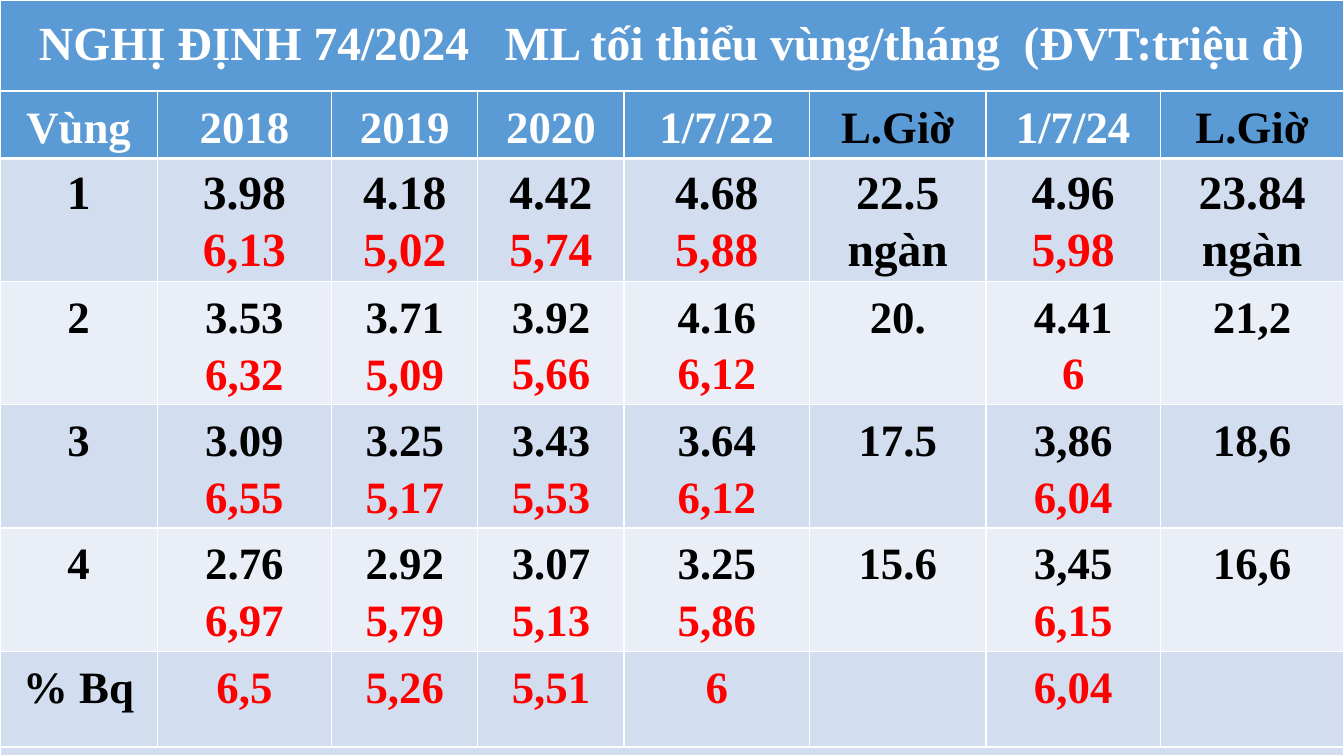
from lxml import etree
from pptx import Presentation
from pptx.dml.color import RGBColor
from pptx.enum.text import MSO_ANCHOR, PP_ALIGN
from pptx.oxml.ns import qn
from pptx.util import Inches, Pt

CENTER = PP_ALIGN.CENTER
MIDDLE = MSO_ANCHOR.MIDDLE
WHITE = RGBColor(0xFF, 0xFF, 0xFF)
BLACK = RGBColor(0x00, 0x00, 0x00)
RED = RGBColor(0xFF, 0x00, 0x00)
BLUE = RGBColor(0x5B, 0x9B, 0xD5)
BAND = RGBColor(0xD2, 0xDE, 0xEF)
PALE = RGBColor(0xEA, 0xEF, 0xF7)

TITLE = "NGHỊ ĐỊNH 74/2024   ML tối thiểu vùng/tháng  (ĐVT:triệu đ)"
UNIT = "ngàn"
HOURLY = "L.Giờ"
WAGES = [
    ["Vùng", "2018", "2019", "2020", "1/7/22", HOURLY, "1/7/24", HOURLY],
    ["1", "3.98\n6,13", "4.18\n5,02", "4.42\n5,74", "4.68\n5,88",
     "22.5\n" + UNIT, "4.96\n5,98", "23.84\n" + UNIT],
    ["2", "3.53\n6,32", "3.71\n5,09", "3.92\n5,66", "4.16\n6,12",
     "20.", "4.41\n6", "21,2"],
    ["3", "3.09\n6,55", "3.25\n5,17", "3.43\n5,53", "3.64\n6,12",
     "17.5", "3,86\n6,04", "18,6"],
    ["4", "2.76\n6,97", "2.92\n5,79", "3.07\n5,13", "3.25\n5,86",
     "15.6", "3,45\n6,15", "16,6"],
    ["% Bq", "6,5", "5,26", "5,51", "6", "", "6,04", ""],
]
COLS = [1.56, 1.73, 1.45, 1.45, 1.84, 1.75, 1.73, 1.82]
ROWS = [0.66] + [1.22] * 4 + [0.95]
LAST = len(WAGES) - 1


class Deck:
    font = "Times New Roman"

    def __init__(self, slide):
        self.slide = slide

    def table(self, top, cols, rows):
        frame = self.slide.shapes.add_table(
            len(rows), len(cols), Inches(0), Inches(top),
            Inches(sum(cols)), Inches(sum(rows)))
        table = frame.table
        table.first_row = table.horz_banding = False
        for col, width in zip(table.columns, cols):
            col.width = Inches(width)
        for row, height in zip(table.rows, rows):
            row.height = Inches(height)
        return table

    def edge(self, cell, base):
        """Draw white borders, with the bottom one of the given width."""
        props = cell._tc.get_or_add_tcPr()
        for side, width in zip("LRTB", (1, 1, 1, base)):
            line = etree.SubElement(props, qn("a:ln" + side), w=str(Pt(width)))
            fill = etree.SubElement(line, qn("a:solidFill"))
            etree.SubElement(fill, qn("a:srgbClr"), val=str(WHITE))

    def cell(self, cell, text, fill, tints, size=32, pitch=40.4, base=1):
        """Fill a cell; tints holds one colour for each line of text."""
        self.edge(cell, base)
        cell.fill.solid()
        cell.fill.fore_color.rgb = fill
        if not text:
            return
        cell.text_frame.text = text
        for para, tint in zip(cell.text_frame.paragraphs, tints):
            para.alignment = CENTER
            para.line_spacing = Pt(pitch)
            font = para.runs[0].font
            font.name = self.font
            font.size = Pt(size)
            font.bold = True
            font.color.rgb = tint


def tint(row, col, line, word):
    if row == 0:
        return BLACK if word == HOURLY else WHITE
    rate = line == 1 and word != UNIT
    return RED if rate or (row == LAST and col > 0) else BLACK


def main():
    prs = Presentation()
    prs.slide_width, prs.slide_height = Inches(13.33), Inches(7.5)
    deck = Deck(prs.slides.add_slide(prs.slide_layouts[6]))

    back = deck.table(0, [13.33], [0.91, 6.59])
    deck.cell(back.cell(0, 0), TITLE, BLUE, [WHITE], 34, 47.2, 3)
    deck.cell(back.cell(1, 0), "", BAND, [])

    grid = deck.table(0.91, COLS, ROWS)
    for r, row in enumerate(WAGES):
        fill = BLUE if r == 0 else BAND if r % 2 else PALE
        for c, text in enumerate(row):
            cell = grid.cell(r, c)
            tints = [tint(r, c, i, word)
                     for i, word in enumerate(text.split("\n"))]
            deck.cell(cell, text, fill, tints, size=34 if r == 1 else 32,
                      base=3 if r == 0 else 1)
            if 0 < r < LAST and c in (1, 2):
                cell.vertical_anchor = MIDDLE
                cell.margin_left = cell.margin_right = Inches(0)
                cell.margin_top = cell.margin_bottom = Inches(0)

    prs.save("out.pptx")


if __name__ == "__main__":
    main()
